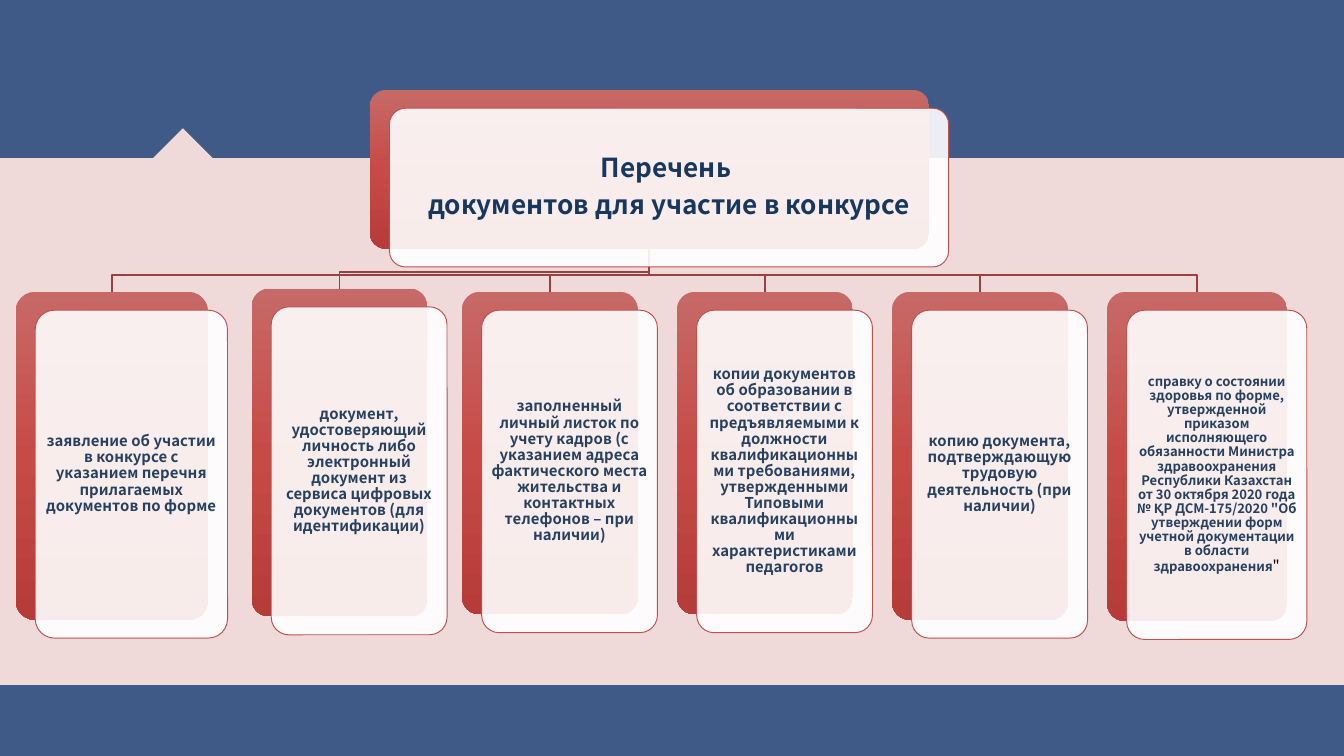
"""Build a slide listing the documents required to enter the competition."""
from copy import deepcopy

from lxml import etree
from pptx import Presentation
from pptx.dml.color import RGBColor
from pptx.enum import shapes, text
from pptx.oxml.ns import qn
from pptx.util import Pt

BLUE = RGBColor(0x3F, 0x5A, 0x87)
PINK = RGBColor(0xF0, 0xD9, 0xD9)
WHITE = RGBColor(0xFF, 0xFF, 0xFF)
BLACK = RGBColor(0, 0, 0)
BRANCH = RGBColor(0x9A, 0x40, 0x3E)
OUTLINE = RGBColor(0xC0, 0x50, 0x4D)
NAVY = RGBColor(0x17, 0x37, 0x5E)
INK = RGBColor(0x25, 0x40, 0x61)
REDS = [RGBColor(0xC7, 0x69, 0x67), RGBColor(0xC6, 0x4B, 0x47), RGBColor(0xB6, 0x3C, 0x39)]
FONT = "Noto Sans CJK SC"
SHIFT_X, SHIFT_Y = 10.5, 9.8
TRUNK_X, TRUNK_TOP = 347.8, 133.2

CARDS = [
    (8.4, 156.4, 103, 175.7, 8,
     "заявление об участии в конкурсе с указанием перечня прилагаемых документов по форме"),
    (134.8, 154.6, 94.2, 175.7, 8,
     "документ, удостоверяющий личность либо электронный документ из сервиса цифровых "
     "документов (для идентификации)"),
    (247.5, 156.4, 94.2, 172.8, 8,
     "заполненный личный листок по учету кадров (с указанием адреса фактического места "
     "жительства и контактных телефонов – при наличии)"),
    (362.7, 156.4, 94.2, 172.8, 8,
     "копии документов об образовании в соответствии с предъявляемыми к должности "
     "квалификационными требованиями, утвержденными Типовыми квалификационными "
     "характеристиками педагогов"),
    (477.9, 156.4, 94.2, 175.7, 8,
     "копию документа, подтверждающую трудовую деятельность (при наличии)"),
    (593.1, 156.4, 96.5, 176.4, 7,
     "справку о состоянии здоровья по форме, утвержденной приказом исполняющего обязанности "
     "Министра здравоохранения Республики Казахстан от 30 октября 2020 года "
     "№ ҚР ДСМ-175/2020 \"Об утверждении форм учетной документации в области здравоохранения"),
]

presentation = Presentation()
presentation.slide_width, presentation.slide_height = Pt(720), Pt(405)
slide = presentation.slides.add_slide(presentation.slide_layouts[5])


def add_card(left, top, width, height):
    """Draw a red card with a translucent white card in front, and return the front one."""
    pair = []
    for dx, dy in ((0, 0), (SHIFT_X, SHIFT_Y)):
        shape = slide.shapes.add_shape(shapes.MSO_SHAPE.ROUNDED_RECTANGLE, Pt(left + dx),
                                       Pt(top + dy), Pt(width), Pt(height))
        shape.adjustments[0] = 0.1
        shape.shadow.inherit = False
        pair.append(shape)
    back, front = pair
    back.line.fill.background()
    back.fill.gradient()
    back.fill.gradient_angle = 270
    stop_list = back._element.spPr.find(qn("a:gradFill")).find(qn("a:gsLst"))
    stop_list.insert(1, deepcopy(stop_list[0]))
    for stop, color, position in zip(back.fill.gradient_stops, REDS, (0, 0.5, 1)):
        stop.color.rgb = color
        stop.position = position
    front.fill.solid()
    front.fill.fore_color.rgb = WHITE
    color_node = front._element.spPr.find(qn("a:solidFill"))[0]
    etree.SubElement(color_node, qn("a:alpha"), val="90000")
    front.line.color.rgb = OUTLINE
    front.line.width = Pt(0.5)
    return front


def write(frame, paragraphs, margin):
    """Fill a text frame with centred paragraphs of (text, size, colour, bold) runs."""
    frame.word_wrap = True
    frame.auto_size = text.MSO_AUTO_SIZE.NONE
    frame.vertical_anchor = text.MSO_ANCHOR.MIDDLE
    frame.margin_left = frame.margin_right = Pt(margin)
    frame.margin_top = frame.margin_bottom = Pt(margin)
    for index, runs in enumerate(paragraphs):
        paragraph = frame.add_paragraph() if index else frame.paragraphs[0]
        paragraph.alignment = text.PP_ALIGN.CENTER
        paragraph.line_spacing = 0.9
        paragraph.space_before = Pt(0)
        paragraph.space_after = Pt(0.35 * runs[0][1])
        for words, size, color, bold in runs:
            run = paragraph.add_run()
            run.text = words
            run.font.name = FONT
            run.font.size = Pt(size)
            run.font.color.rgb = color
            run.font.bold = bold


for kind, left, top, width, height, color, rotation in (
    (shapes.MSO_SHAPE.RECTANGLE, 0, 0, 720, 405, BLUE, 0),
    (shapes.MSO_SHAPE.RECTANGLE, 0, 84.7, 720, 282.2, PINK, 0),
    (shapes.MSO_SHAPE.RIGHT_TRIANGLE, 86.7, 73.4, 22.5, 22.5, PINK, 135),
):
    shape = slide.shapes.add_shape(kind, Pt(left), Pt(top), Pt(width), Pt(height))
    shape.rotation = rotation
    shape.shadow.inherit = False
    shape.fill.solid()
    shape.fill.fore_color.rgb = color
    shape.line.fill.background()

for left, top, width, height, size, words in reversed(CARDS):
    middle, bend = left + width / 2, top - 9
    builder = slide.shapes.build_freeform(Pt(TRUNK_X), Pt(TRUNK_TOP))
    builder.add_line_segments([(Pt(TRUNK_X), Pt(bend)), (Pt(middle), Pt(bend)),
                               (Pt(middle), Pt(top))], close=False)
    branch = builder.convert_to_shape()
    branch.shadow.inherit = False
    branch.fill.background()
    branch.line.color.rgb = BRANCH
    branch.line.width = Pt(1)

add_card(198.2, 48.2, 299.5, 85)
title = slide.shapes.title
title.left, title.top, title.width, title.height = Pt(211.2), Pt(60.5), Pt(294.5), Pt(80)
write(title.text_frame, [[("Перечень ", 14, NAVY, True)],
                         [("документов для участие в конкурсе", 14, NAVY, True)]], 4.2)
slide.shapes._spTree.append(title._element)

for left, top, width, height, size, words in CARDS:
    front = add_card(left, top, width, height)
    runs = [(words, size, INK, True)]
    if words == CARDS[-1][-1]:
        runs.append(("\"", 8, BLACK, False))
    write(front.text_frame, [runs], 2.4)

presentation.save("out.pptx")
